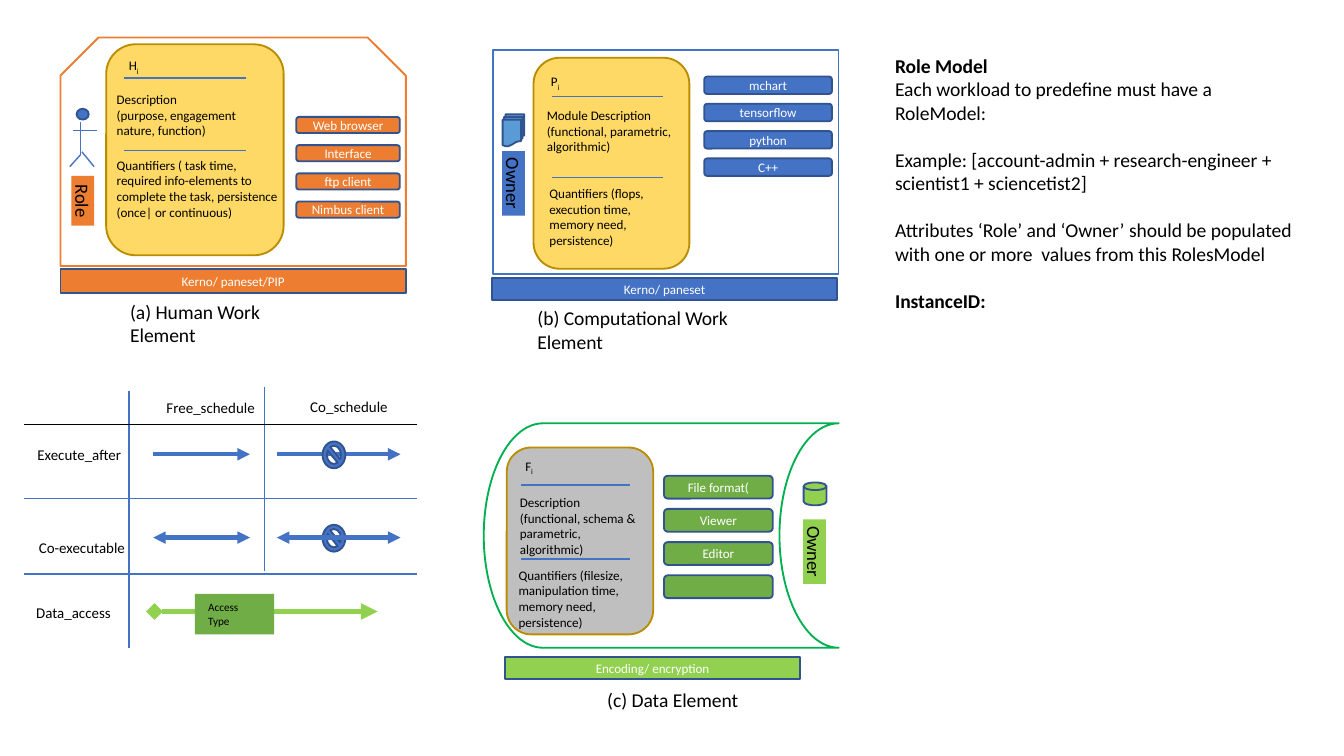
from pptx import Presentation, util as u
from pptx.dml.color import RGBColor
from pptx.enum import shapes, text
from pptx.oxml import parse_xml
from pptx.oxml.ns import nsdecls, qn

CELL = 0.1  # grid of 100 columns, in inches
BLUE, NAVY, ORANGE, GOLD, SAND = "4472C4", "31538F", "ED7D31", "BA8C00", "FFD966"
GREEN, LIME, LEAF, GREY, SKY = "70AD47", "92D050", "00B050", "BFBFBF", "5B9BD5"
BLACK, WHITE = "000000", "FFFFFF"
KIND = shapes.MSO_SHAPE
MID = text.PP_ALIGN.CENTER


def rgb(code):
    return RGBColor.from_string(code)


def write(frame, lines, size, color=BLACK, align=None):
    """Fill a frame; each line is a list of (text, style) runs."""
    for i, runs in enumerate(lines):
        para = frame.paragraphs[0] if i == 0 else frame.add_paragraph()
        para.alignment = align
        for words, style in runs:
            run = para.add_run()
            run.text = words
            font = run.font
            font.name, font.size = "Calibri", u.Pt(size)
            font.color.rgb = rgb(color)
            font.bold = style == "bold"
            if style == "sub":
                run._r.get_or_add_rPr().set("baseline", "-25000")


def plain(*lines):
    return [[(line, None)] for line in lines]


class Pane:
    """A region of the slide; places parts in cells from its own corner."""

    def __init__(self, slide, x, y):
        self.slide, self.x, self.y = slide, x, y

    def inner(self, x, y):
        return Pane(self.slide, self.x + x, self.y + y)

    def spot(self, x, y):
        return u.Inches((self.x + x) * CELL), u.Inches((self.y + y) * CELL)

    def box(self, x, y, w, h):
        return *self.spot(x, y), u.Inches(w * CELL), u.Inches(h * CELL)

    def shape(self, kind, box, fill=None, line=NAVY):
        item = self.slide.shapes.add_shape(kind, *self.box(*box))
        item.shadow.inherit = False
        if fill:
            item.fill.solid()
            item.fill.fore_color.rgb = rgb(fill)
        else:
            item.fill.background()
        if line:
            item.line.color.rgb = rgb(line)
            item.line.width = u.Pt(1)
        else:
            item.line.fill.background()
        return item

    def bar(self, box, fill, words, kind=KIND.RECTANGLE):
        item = self.shape(kind, box, fill)
        item.text_frame.vertical_anchor = text.MSO_ANCHOR.MIDDLE
        if words:
            write(item.text_frame, plain(words), 7, WHITE, MID)

    def stack(self, box, step, fill, names):
        """Rounded buttons, one below another."""
        x, y, w, h = box
        for i, name in enumerate(names):
            self.bar((x, y + i * step, w, h), fill, name, KIND.ROUNDED_RECTANGLE)

    def tag(self, box, fill, words):
        """A label turned to read downwards."""
        item = self.shape(KIND.RECTANGLE, box, fill, None)
        item.rotation = 90
        frame = item.text_frame
        frame.margin_left = frame.margin_right = 0
        frame.margin_top = frame.margin_bottom = 0
        frame.vertical_anchor = text.MSO_ANCHOR.TOP
        write(frame, plain(words), 10, BLACK, MID)

    def note(self, box, lines, size=7):
        frame = self.slide.shapes.add_textbox(*self.box(*box)).text_frame
        frame.word_wrap = True
        frame.auto_size = text.MSO_AUTO_SIZE.SHAPE_TO_FIT_TEXT
        write(frame, lines, size)

    def rule(self, start, end, color=BLUE, width=0.75, head=None, tail=None):
        item = self.slide.shapes.add_connector(
            shapes.MSO_CONNECTOR.STRAIGHT, *self.spot(*start), *self.spot(*end))
        item.line.color.rgb = rgb(color)
        item.line.width = u.Pt(width)
        line = item.line._get_or_add_ln()
        for name, tip in (("headEnd", head), ("tailEnd", tail)):
            if tip:
                line.append(parse_xml(f'<a:{name} {nsdecls("a")} type="{tip}"/>'))
        item._element.spPr.append(parse_xml(f'<a:effectLst {nsdecls("a")}/>'))


def card(pane, size, fill, sign, rules, about, counts):
    """Rounded card: symbol, description and quantifiers, split by two rules."""
    pane.shape(KIND.ROUNDED_RECTANGLE, (0, 0, *size), fill, GOLD)
    left, right, *rows = rules
    for y in rows:
        pane.rule((left, y), (right, y))
    letter, x, y = sign
    pane.note((x, y, 8.2, 2.2), [[(letter, None), ("i", "sub")]])
    for box, lines in (about, counts):
        pane.note(box, plain(*lines))


def figure(pane):
    """Stick person."""
    pane.shape(KIND.OVAL, (0.5, 0, 0.9, 0.8), BLUE)
    for start, end in (((0.8, 3.4), (0, 4.3)), ((0.9, 3.2), (1.8, 4.3)),
                       ((0.2, 1.6), (2, 1.6)), ((0.8, 1), (0.8, 3.4))):
        pane.rule(start, end)


def human(pane):
    pane.shape(KIND.SNIP_2_SAME_RECTANGLE, (0, 0, 25.7, 17), None, ORANGE)
    card(pane.inner(3.4, 0.5), (13.2, 15.7), SAND, ("H", 0.7, 0.5),
         (1.3, 10.4, 2.5, 7.9),
         ((-0.2, 3, 11.8, 4.5),
          ["Description", "(purpose, engagement nature, function)"]),
         ((-0.2, 7.9, 14, 5.7),
          ["Quantifiers ( task time, required info-elements to complete "
           "the task, persistence (once| or continuous)"]))
    pane.bar((0, 17.2, 25.7, 1.8), ORANGE, "Kerno/ paneset/PIP")
    pane.stack((17.55, 5.9, 7.7, 1.2), 2.1, ORANGE,
               ["Web browser", "Interface", "ftp client", "Nimbus client"])
    figure(pane.inner(0.7, 5.3))
    pane.tag((-0.2, 11.3, 3.7, 1.7), ORANGE, "Role")
    pane.note((4.2, 19, 16.7, 4.5), plain("(a) Human Work Element"), 10.5)


def compute(pane):
    pane.shape(KIND.RECTANGLE, (0, 0, 25.7, 16.7), None, BLUE)
    pane.bar((-0.1, 17, 25.7, 1.6), BLUE, "Kerno/ paneset")
    pane.stack((15.7, 2, 9.5, 1.3), 2.03, BLUE,
               ["mchart", "tensorflow", "python", "C++"])
    card(pane.inner(3, 0.6), (11.6, 15.7), SAND, ("P", 0.3, 0.7),
         (1.35, 9.6, 2.9, 8.9),
         ((0, 3.2, 11.9, 4.5),
          ["Module Description", "(functional, parametric, algorithmic)"]),
         ((0.2, 9, 11.4, 5.7),
          ["Quantifiers (flops, execution time, memory need, persistence)"]))
    pane.note((2.3, 18.6, 20.8, 4.5), plain("(b) Computational Work Element"), 10.5)
    pane.tag((-0.9, 9.1, 4.8, 1.7), BLUE, "Owner")
    pane.shape(KIND.FLOWCHART_MULTIDOCUMENT, (0.7, 4.8, 1.6, 2.4), SKY)


def data(pane):
    pane.shape(KIND.FLOWCHART_STORED_DATA, (0, 0, 26.4, 16.7), None, LEAF)
    card(pane.inner(1.7, 1.8), (10.9, 13.9), GREY, ("F", 0.4, 0.3),
         (1.1, 9.2, 2.8, 8.3),
         ((0, 3, 10.6, 5.7),
          ["Description (functional, schema & parametric, algorithmic)"]),
         ((-0.1, 8.4, 11.1, 5.7),
          ["Quantifiers (filesize, manipulation time, memory need, persistence)"]))
    pane.bar((1.6, 17.4, 21.9, 1.6), LIME, "Encoding/ encryption")
    pane.stack((13.4, 3.9, 8.1, 1.7), 2.47, GREEN,
               ["File format(", "Viewer", "Editor", ""])
    pane.note((8.2, 19.2, 12.6, 2.8), plain("(c) Data Element"), 10.5)
    pane.tag((22.2, 8.7, 4.8, 1.7), LIME, "Owner")
    pane.shape(KIND.FLOWCHART_MAGNETIC_DISK, (23.8, 4.4, 1.7, 1.7), LIME)


def matrix(pane):
    """Schedule kinds against execution links."""
    for x, top, end in ((7.8, 0.3, 19.4), (17.9, 0, 13.7)):
        pane.rule((x, top), (x, end))
    for y, color in ((2.8, BLACK), (8.3, BLUE), (13.9, BLUE)):
        pane.rule((0, y), (29.2, y), color)
    for x, y, words in ((9.6, 0.4, "Free_schedule"), (20.3, 0.3, "Co_schedule"),
                        (0, 3.9, "Execute_after"), (0.1, 10.8, "Co-executable"),
                        (-0.1, 15.6, "Data_access")):
        pane.note((x, y, 9.2, 2.4), plain(words), 8)
    for y, head, front in ((5, None, True), (11.2, "triangle", False)):
        sign = (22.2, y - 0.95, 1.7, 2)
        if not front:
            pane.shape(KIND.NO_SYMBOL, sign, BLUE)
        for left, right in ((9.6, 16.8), (18.8, 28)):
            pane.rule((left, y), (right, y), BLUE, 2.25, head, "triangle")
        if front:
            pane.shape(KIND.NO_SYMBOL, sign, BLUE)
    pane.rule((9.7, 16.7), (26.3, 16.7), LIME, 3, "diamond", "triangle")
    item = pane.shape(KIND.RECTANGLE, (12.7, 15.4, 5.9, 3), GREEN, None)
    item.text_frame.vertical_anchor = text.MSO_ANCHOR.TOP
    write(item.text_frame, plain("Access Type"), 6, BLACK, text.PP_ALIGN.LEFT)


def model(pane, body):
    body.left, body.top, body.width, body.height = pane.box(0, 0, 32.7, 20.5)
    frame = body.text_frame
    frame.auto_size = text.MSO_AUTO_SIZE.NONE
    write(frame, [
        [("Role Model", "bold")],
        [("Each workload to predefine must have a RoleModel:", None)],
        [("Example: [account-admin + research-engineer + scientist1 + "
          "sciencetist2]", None)],
        [("Attributes ‘Role’ and ‘Owner’ should be populated with one or more  "
          "values from this RolesModel", None)],
        [("InstanceID:", "bold")]], 10.5)
    for i, para in enumerate(frame.paragraphs):
        para.space_before = u.Pt(12.6 if i > 1 else 0)
        props = para._p.get_or_add_pPr()
        props.set("marL", "0")
        props.set("indent", "0")
        props.append(props.makeelement(qn("a:buNone"), {}))


def main():
    deck = Presentation()
    deck.slide_width = u.Inches(10)
    deck.slide_height = deck.slide_width * 9 // 16
    slide = deck.slides.add_slide(deck.slide_layouts[1])
    title, body = slide.placeholders
    title._element.getparent().remove(title._element)
    data(Pane(slide, 36, 31.5))
    human(Pane(slide, 4.5, 2.8))
    compute(Pane(slide, 36.7, 3.7))
    matrix(Pane(slide, 1.8, 28.8))
    model(Pane(slide, 65.6, 3.5), body)
    deck.save("out.pptx")


if __name__ == "__main__":
    main()
